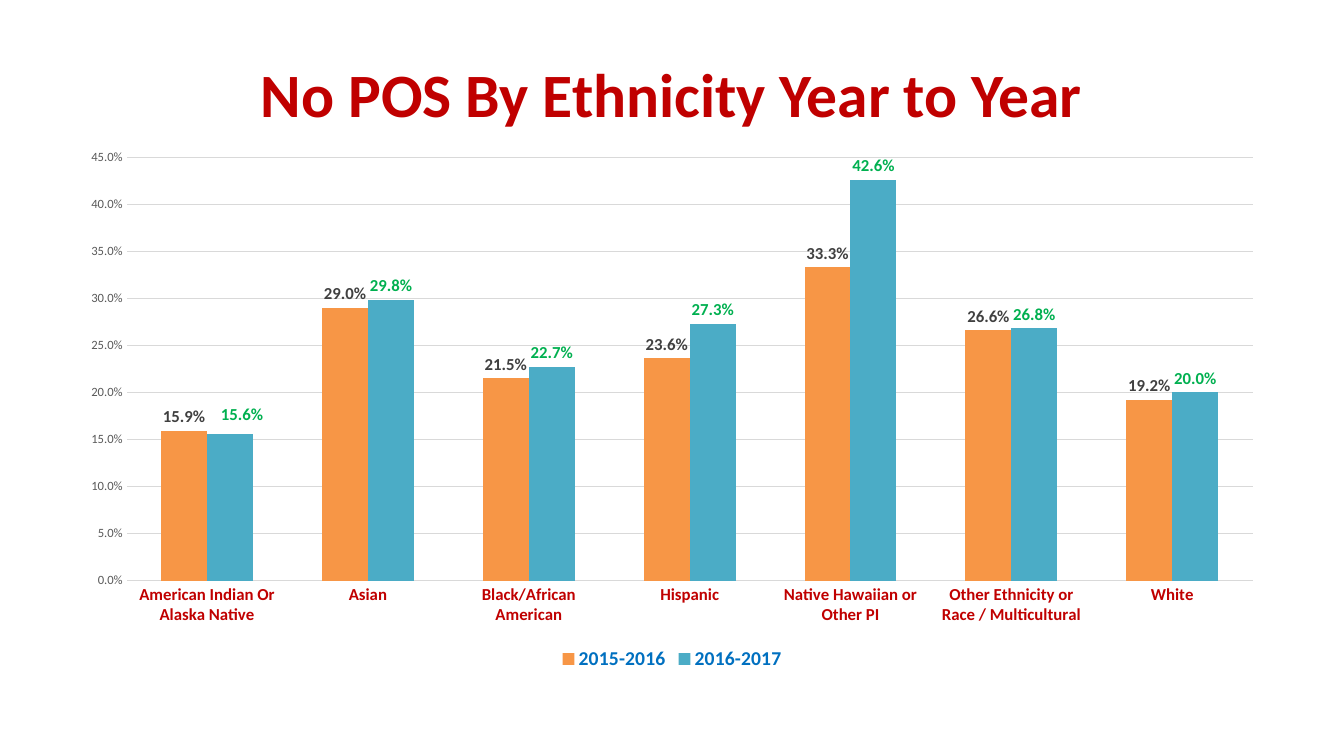
from lxml import etree
from pptx import Presentation
from pptx.chart.data import CategoryChartData
from pptx.dml.color import RGBColor
from pptx.enum.chart import XL_CHART_TYPE, XL_LABEL_POSITION, XL_LEGEND_POSITION, XL_TICK_MARK
from pptx.enum.text import MSO_ANCHOR, MSO_AUTO_SIZE, PP_ALIGN
from pptx.oxml.ns import qn
from pptx.util import Cm, Pt

COLUMNS = XL_CHART_TYPE.COLUMN_CLUSTERED
OUTSIDE_END = XL_LABEL_POSITION.OUTSIDE_END
BOTTOM = XL_LEGEND_POSITION.BOTTOM
NO_TICK = XL_TICK_MARK.NONE
MIDDLE = MSO_ANCHOR.MIDDLE
NO_AUTOFIT = MSO_AUTO_SIZE.NONE
CENTER = PP_ALIGN.CENTER

FONT = "Calibri"
PERCENT = "0.0%"
BLACK = RGBColor(0x00, 0x00, 0x00)
RED = RGBColor(0xC0, 0x00, 0x00)
BLUE = RGBColor(0x00, 0x70, 0xC0)
GREEN = RGBColor(0x00, 0xB0, 0x50)
ORANGE = RGBColor(0xF7, 0x96, 0x46)
TEAL = RGBColor(0x4B, 0xAC, 0xC6)
DARK_GREY = RGBColor(0x40, 0x40, 0x40)
MID_GREY = RGBColor(0x59, 0x59, 0x59)
LIGHT_GREY = RGBColor(0xD9, 0xD9, 0xD9)

ETHNICITIES = [
    "American Indian Or Alaska Native", "Asian", "Black/African American", "Hispanic",
    "Native Hawaiian or Other PI", "Other Ethnicity or Race / Multicultural", "White",
]
# Year, values, column colour, label colour
YEARS = [
    ("2015-2016", (0.159, 0.29, 0.215, 0.236, 0.333, 0.266, 0.192), ORANGE, DARK_GREY),
    ("2016-2017", (0.156, 0.298, 0.227, 0.273, 0.426, 0.268, 0.2), TEAL, GREEN),
]


def set_font(font, size, color, bold=False):
    font.name = FONT
    font.size = Pt(size)
    font.bold = bold
    font.color.rgb = color


def set_layout(parent, index, **settings):
    """Give a chart part a manual layout, in fractions of the chart."""
    for old in parent.findall(qn("c:layout")):
        parent.remove(old)
    layout = etree.Element(qn("c:layout"))
    manual = etree.SubElement(layout, qn("c:manualLayout"))
    for name, value in settings.items():
        etree.SubElement(manual, qn("c:" + name)).set("val", str(value))
    parent.insert(index, layout)


def add_title(slide, text):
    sp = slide.shapes.title
    sp.left, sp.top, sp.width, sp.height = Cm(1.7), Cm(0.76), Cm(30.48), Cm(3.18)
    tf = sp.text_frame
    tf.text = text
    tf.auto_size = NO_AUTOFIT
    tf.vertical_anchor = MIDDLE
    p = tf.paragraphs[0]
    p.alignment = CENTER
    set_font(p.runs[0].font, 44, RED, True)


def format_axes(chart):
    cat, val = chart.category_axis, chart.value_axis
    for axis, size, color, bold in ((cat, 12, RED, True), (val, 9, MID_GREY, False)):
        axis.major_tick_mark = axis.minor_tick_mark = NO_TICK
        axis.format.line.fill.background()
        set_font(axis.tick_labels.font, size, color, bold)
    val.minimum_scale, val.maximum_scale, val.major_unit = 0, 0.45, 0.05
    val.tick_labels.number_format = PERCENT
    val.tick_labels.number_format_is_linked = False
    grid = val.major_gridlines.format.line
    grid.color.rgb = LIGHT_GREY
    grid.width = Pt(0.75)


def format_series(series, column_color, label_color):
    series.format.fill.solid()
    series.format.fill.fore_color.rgb = column_color
    series.invert_if_negative = False
    labels = series.data_labels
    labels.show_value = True
    labels.position = OUTSIDE_END
    labels.number_format = PERCENT
    labels.number_format_is_linked = False
    set_font(labels.font, 12, label_color, True)


def add_column_chart(slide):
    data = CategoryChartData(number_format=PERCENT)
    data.categories = ETHNICITIES
    for year, values, _, _ in YEARS:
        data.add_series(year, values)
    chart = slide.shapes.add_chart(
        COLUMNS, Cm(1.7), Cm(3.5), Cm(30.48), Cm(13.51), data).chart
    chart.has_title = False
    set_font(chart.font, 10, BLACK)
    format_axes(chart)

    plot = chart.plots[0]
    plot.gap_width = 150
    plot.overlap = 0
    plot.vary_by_categories = False
    for series, (_, _, column_color, label_color) in zip(plot.series, YEARS):
        format_series(series, column_color, label_color)

    chart.has_legend = True
    chart.legend.position = BOTTOM
    chart.legend.include_in_layout = False
    set_font(chart.legend.font, 14, BLUE, True)

    # Nudge the first green label clear of its neighbour
    label = plot.series[1].points[0].data_label
    label.position = OUTSIDE_END
    set_font(label.font, 12, GREEN, True)
    set_layout(chart.element.xpath(".//c:dLbl")[0], 1, x=0.01, y=-0.01)

    # Fix the plot area inside the chart
    set_layout(chart.element.xpath(".//c:plotArea")[0], 0, layoutTarget="inner",
               xMode="edge", yMode="edge", x=0.049, y=0.034, w=0.931, h=0.79)


def main():
    prs = Presentation()
    prs.slide_width, prs.slide_height = Cm(33.87), Cm(19.05)
    slide = prs.slides.add_slide(prs.slide_layouts[5])
    add_title(slide, "No POS By Ethnicity Year to Year")
    add_column_chart(slide)
    prs.save("out.pptx")


if __name__ == "__main__":
    main()
